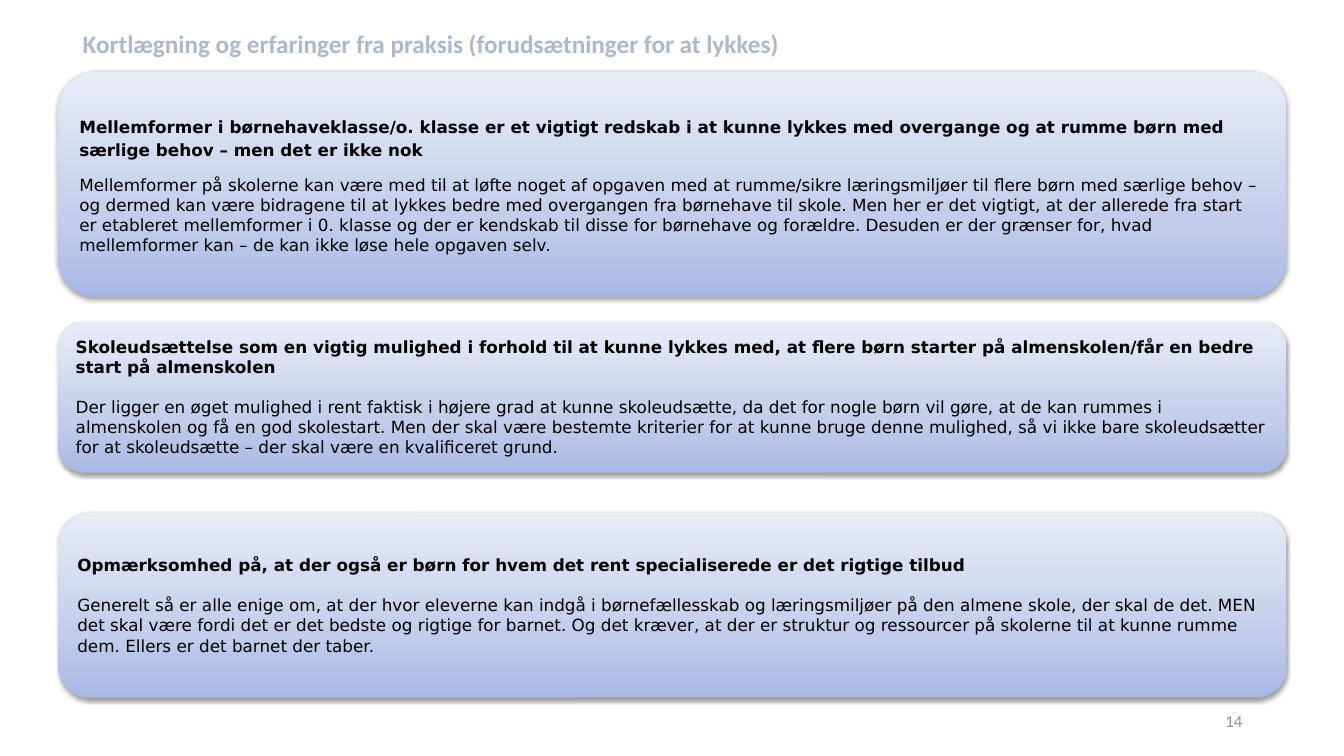
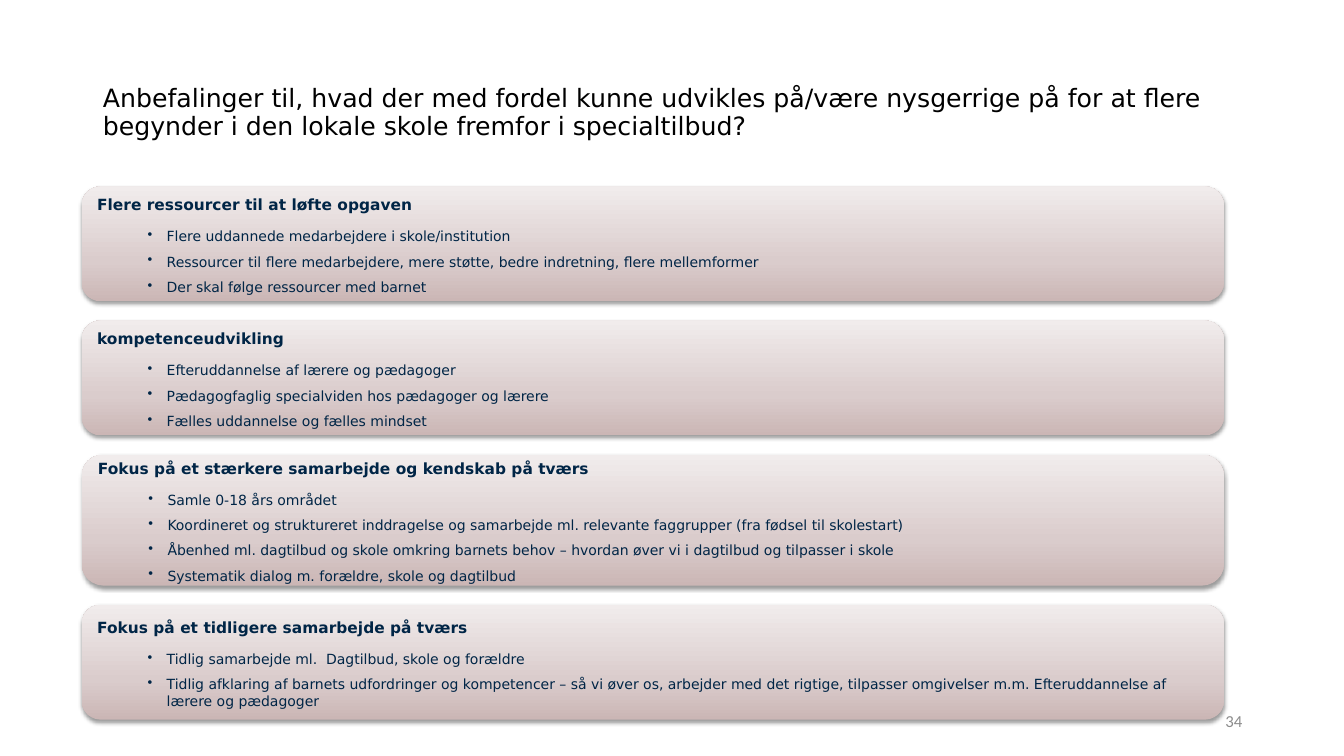
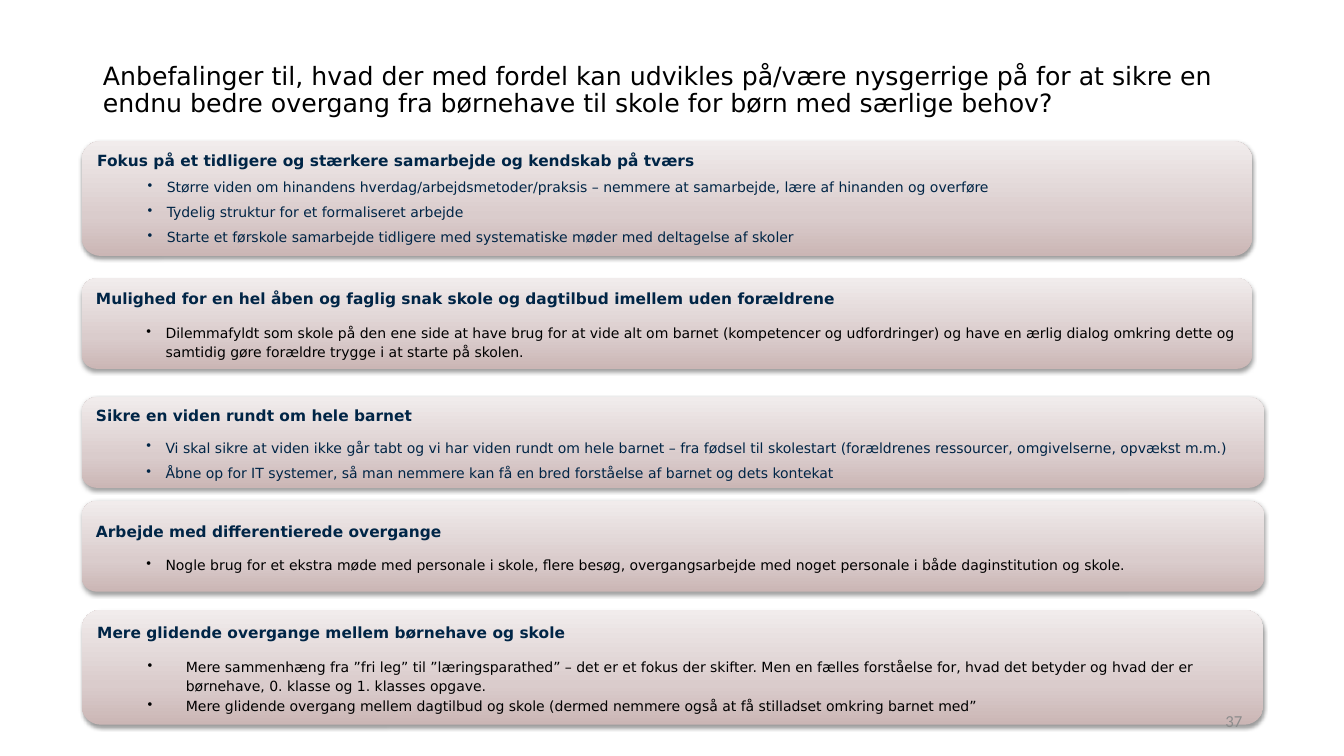
from dataclasses import dataclass, field

from lxml import etree
from pptx import Presentation
from pptx import util as u
from pptx.dml.color import RGBColor
from pptx.enum import shapes, text
from pptx.oxml import ns, parse_xml

BLACK = RGBColor(0x00, 0x00, 0x00)
NAVY = RGBColor(0x00, 0x25, 0x46)
PALE_BLUE = RGBColor(0xAD, 0xB9, 0xCA)
GREY = RGBColor(0x8C, 0x8C, 0x8C)
BLUE_FADE = (RGBColor(0xA9, 0xB8, 0xE4), RGBColor(0xC3, 0xCD, 0xEB), RGBColor(0xE8, 0xEC, 0xF8))
ROSE_FADE = (RGBColor(0xCB, 0xB6, 0xB5), RGBColor(0xDA, 0xCC, 0xCC), RGBColor(0xF1, 0xEC, 0xEC))
FADE_STOPS = (0, 35, 100)
BODY_FONT, SMALL_FONT = "DejaVu Sans", "Calibri"
LEFT, RIGHT = text.PP_ALIGN.LEFT, text.PP_ALIGN.RIGHT
MIDDLE, TOP = text.MSO_ANCHOR.MIDDLE, text.MSO_ANCHOR.TOP


@dataclass
class Style:
    size: float
    color: RGBColor = BLACK
    bold: bool = False
    name: str = BODY_FONT
    para: dict = field(default_factory=dict)
    indent: tuple = ()


LOOSE = {"line_spacing": 1.15, "space_after": u.Pt(10)}
TIGHT = {"space_after": u.Pt(6)}
EXACT = {"line_spacing": u.Pt(14)}
NEAR, FAR = (0.69, -0.19), (0.88, -0.38)

TITLE = Style(18, para={"line_spacing": 0.9})
SMALL_TITLE = Style(18, PALE_BLUE, True, SMALL_FONT)
NUMBER = Style(12, GREY, name=SMALL_FONT, para={"alignment": RIGHT})
LEAD_LOOSE = Style(12, bold=True, para=LOOSE)
LEAD = Style(12, bold=True, para={"space_after": u.Pt(14)})
BODY = Style(12)
HEAD = Style(11, NAVY, True, para=LOOSE)
HEAD_TIGHT = Style(11, NAVY, True, para=TIGHT)
POINT = Style(10, NAVY, para=TIGHT, indent=NEAR)
POINT_LOOSE = Style(10, para=LOOSE, indent=NEAR)
POINT_FAR = Style(10, para=EXACT, indent=FAR)
POINT_FAR_LAST = Style(10, para={**EXACT, "space_after": u.Pt(10)}, indent=FAR)


def inches(box):
    return [u.Inches(v) for v in box]


def set_all(target, values):
    for key, value in values.items():
        setattr(target, key, value)


def write(tf, lines, anchor=MIDDLE, wrap=True):
    set_all(tf, {"word_wrap": wrap, "vertical_anchor": anchor, "auto_size": text.MSO_AUTO_SIZE.NONE})
    for i, (style, words) in enumerate(lines):
        p = tf.add_paragraph() if i else tf.paragraphs[0]
        set_all(p, {"alignment": LEFT, **style.para})
        r = p.add_run()
        r.text = words
        set_all(r.font, {"size": u.Pt(style.size), "bold": style.bold, "name": style.name})
        r.font.color.rgb = style.color
        if style.indent:
            p.level = 1
            pPr = p._p.get_or_add_pPr()
            for key, value in zip(("marL", "indent"), style.indent):
                pPr.set(key, str(u.Inches(value)))
            etree.SubElement(pPr, ns.qn("a:buChar")).set("char", "•")


def add_title(s, box, words, style=TITLE, anchor=MIDDLE, wrap=True):
    title = s.shapes.title
    set_all(title, dict(zip(("left", "top", "width", "height"), inches(box))))
    write(title.text_frame, [(style, words)], anchor, wrap)


def add_number(s, number):
    sp = s.shapes.add_textbox(*inches((9.42, 6.95, 3, 0.4)))
    write(sp.text_frame, [(NUMBER, number)])


def add_card(s, box, fade, lines):
    sp = s.shapes.add_shape(shapes.MSO_SHAPE.ROUNDED_RECTANGLE, *inches(box))
    stops = "".join(
        f'<a:gs pos="{pos * 1000}"><a:srgbClr val="{color}"/></a:gs>'
        for pos, color in zip(FADE_STOPS, fade))
    spPr = sp._element.spPr
    spPr.append(parse_xml(
        f'<a:gradFill {ns.nsdecls("a")} rotWithShape="1"><a:gsLst>{stops}</a:gsLst>'
        '<a:lin ang="16200000" scaled="0"/></a:gradFill>'))
    sp.line.fill.background()
    spPr.append(parse_xml(
        f'<a:effectLst {ns.nsdecls("a")}><a:outerShdw blurRad="{u.Pt(3.1)}" dist="{u.Pt(1.6)}" '
        'dir="5400000" rotWithShape="0"><a:srgbClr val="000000"><a:alpha val="38000"/>'
        '</a:srgbClr></a:outerShdw></a:effectLst>'))
    write(sp.text_frame, lines)


def add_cards_slide(prs, title, fade, left, cards, number):
    s = prs.slides.add_slide(prs.slide_layouts[5])
    add_title(s, **title)
    for (top, width, height), lines in cards:
        add_card(s, (left, top, width, height), fade, lines)
    add_number(s, number)


def points(head, *items):
    return [(HEAD, head)] + [(POINT, item) for item in items]


PRACTICE = [
    ((0.71, 12.18, 2.24), [
        (LEAD_LOOSE, "Mellemformer i børnehaveklasse/o. klasse er et vigtigt redskab i at kunne lykkes med "
                     "overgange og at rumme børn med særlige behov – men det er ikke nok"),
        (BODY, "Mellemformer på skolerne kan være med til at løfte noget af opgaven med at rumme/sikre "
               "læringsmiljøer til flere børn med særlige behov – og dermed kan være bidragene til at lykkes "
               "bedre med overgangen fra børnehave til skole. Men her er det vigtigt, at der allerede fra "
               "start er etableret mellemformer i 0. klasse og der er kendskab til disse for børnehave og "
               "forældre. Desuden er der grænser for, hvad mellemformer kan – de kan ikke løse hele opgaven "
               "selv."),
    ]),
    ((3.19, 12.18, 1.5), [
        (LEAD, "Skoleudsættelse som en vigtig mulighed i forhold til at kunne lykkes med, at flere børn "
               "starter på almenskolen/får en bedre start på almenskolen"),
        (BODY, "Der ligger en øget mulighed i rent faktisk i højere grad at kunne skoleudsætte, da det for "
               "nogle børn vil gøre, at de kan rummes i almenskolen og få en god skolestart. Men der skal "
               "være bestemte kriterier for at kunne bruge denne mulighed, så vi ikke bare skoleudsætter for "
               "at skoleudsætte – der skal være en kvalificeret grund."),
    ]),
    ((5.09, 12.18, 1.83), [
        (LEAD, "Opmærksomhed på, at der også er børn for hvem det rent specialiserede er det rigtige tilbud"),
        (BODY, "Generelt så er alle enige om, at der hvor eleverne kan indgå i børnefællesskab og "
               "læringsmiljøer på den almene skole, der skal de det. MEN det skal være fordi det er det "
               "bedste og rigtige for barnet. Og det kræver, at der er struktur og ressourcer på skolerne "
               "til at kunne rumme dem. Ellers er det barnet der taber."),
    ]),
]

LOCAL_SCHOOL = [
    ((1.85, 11.33, 1.14), points(
        "Flere ressourcer til at løfte opgaven",
        "Flere uddannede medarbejdere i skole/institution",
        "Ressourcer til flere medarbejdere, mere støtte, bedre indretning, flere mellemformer",
        "Der skal følge ressourcer med barnet")),
    ((3.18, 11.33, 1.14), points(
        "kompetenceudvikling",
        "Efteruddannelse af lærere og pædagoger",
        "Pædagogfaglig specialviden hos pædagoger og lærere",
        "Fælles uddannelse og fælles mindset")),
    ((4.51, 11.33, 1.3), points(
        "Fokus på et stærkere samarbejde og kendskab på tværs",
        "Samle 0-18 års området",
        "Koordineret og struktureret inddragelse og samarbejde ml. relevante faggrupper (fra fødsel til "
        "skolestart)",
        "Åbenhed ml. dagtilbud og skole omkring barnets behov – hvordan øver vi i dagtilbud og tilpasser i "
        "skole",
        "Systematik dialog m. forældre, skole og dagtilbud")),
    ((6, 11.33, 1.14), points(
        "Fokus på et tidligere samarbejde på tværs",
        "Tidlig samarbejde ml.  Dagtilbud, skole og forældre",
        "Tidlig afklaring af barnets udfordringer og kompetencer – så vi øver os, arbejder med det rigtige, "
        "tilpasser omgivelser m.m. Efteruddannelse af lærere og pædagoger")),
]

TRANSITION = [
    ((1.4, 11.61, 1.14), [
        (HEAD_TIGHT, "Fokus på et tidligere og stærkere samarbejde og kendskab på tværs"),
        (POINT, "Større viden om hinandens hverdag/arbejdsmetoder/praksis – nemmere at samarbejde, lære af "
                "hinanden og overføre"),
        (POINT, "Tydelig struktur for et formaliseret arbejde"),
        (POINT, "Starte et førskole samarbejde tidligere med systematiske møder med deltagelse af skoler"),
    ]),
    ((2.76, 11.61, 0.9), [
        (HEAD, "Mulighed for en hel åben og faglig snak skole og dagtilbud imellem uden forældrene"),
        (POINT_LOOSE, "Dilemmafyldt som skole på den ene side at have brug for at vide alt om barnet "
                      "(kompetencer og udfordringer) og have en ærlig dialog omkring dette og samtidig gøre "
                      "forældre trygge i at starte på skolen."),
    ]),
    ((3.94, 11.73, 0.9), points(
        "Sikre en viden rundt om hele barnet",
        "Vi skal sikre at viden ikke går tabt og vi har viden rundt om hele barnet – fra fødsel til "
        "skolestart (forældrenes ressourcer, omgivelserne, opvækst m.m.)",
        "Åbne op for IT systemer, så man nemmere kan få en bred forståelse af barnet og dets kontekat")),
    ((4.97, 11.73, 0.9), [
        (HEAD, "Arbejde med differentierede overgange"),
        (POINT_LOOSE, "Nogle brug for et ekstra møde med personale i skole, flere besøg, overgangsarbejde "
                      "med noget personale i både daginstitution og skole."),
    ]),
    ((6.05, 11.72, 1.14), [
        (HEAD, "Mere glidende overgange mellem børnehave og skole"),
        (POINT_FAR, "Mere sammenhæng fra ”fri leg” til ”læringsparathed” – det er et fokus der skifter. Men "
                    "en fælles forståelse for, hvad det betyder og hvad der er børnehave, 0. klasse og "
                    "1. klasses opgave."),
        (POINT_FAR_LAST, "Mere glidende overgang mellem dagtilbud og skole (dermed nemmere også at få "
                         "stilladset omkring barnet med”"),
    ]),
]


def main():
    prs = Presentation()
    set_all(prs, {"slide_width": u.Inches(13.33), "slide_height": u.Inches(7.5)})
    add_cards_slide(prs, {
        "box": (0.72, 0.23, 7.17, 0.4), "style": SMALL_TITLE, "anchor": TOP, "wrap": False,
        "words": "Kortlægning og erfaringer fra praksis (forudsætninger for at lykkes)",
    }, BLUE_FADE, 0.58, PRACTICE, "14")
    add_cards_slide(prs, {
        "box": (0.92, 0.4, 11.5, 1.45),
        "words": "Anbefalinger til, hvad der med fordel kunne udvikles på/være nysgerrige på for at flere "
                 "begynder i den lokale skole fremfor i specialtilbud?",
    }, ROSE_FADE, 0.81, LOCAL_SCHOOL, "34")
    add_cards_slide(prs, {
        "box": (0.92, 0.18, 11.5, 1.45),
        "words": "Anbefalinger til, hvad der med fordel kan udvikles på/være nysgerrige på for at sikre en "
                 "endnu bedre overgang fra børnehave til skole for børn med særlige behov?",
    }, ROSE_FADE, 0.81, TRANSITION, "37")
    prs.save("out.pptx")


if __name__ == "__main__":
    main()
